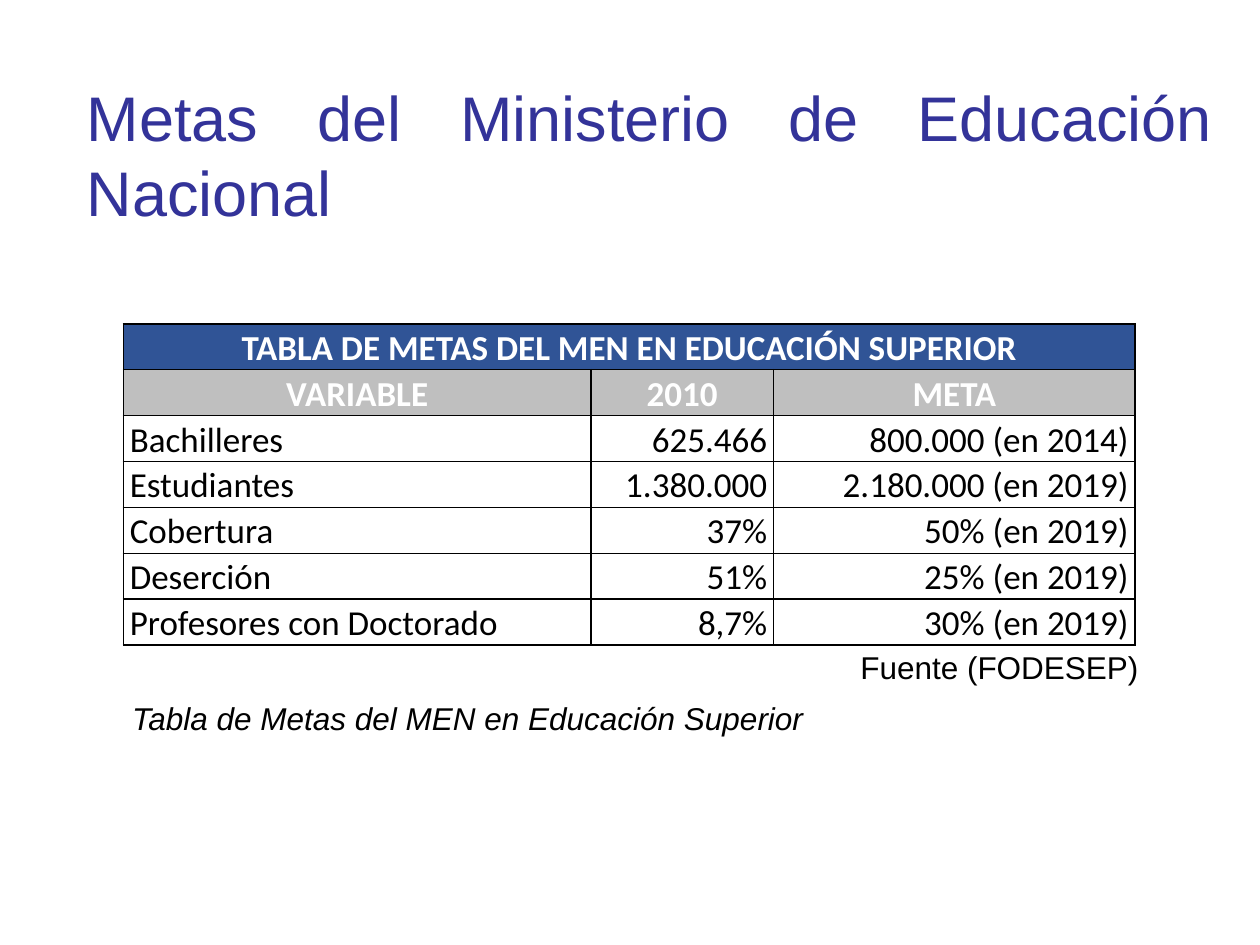
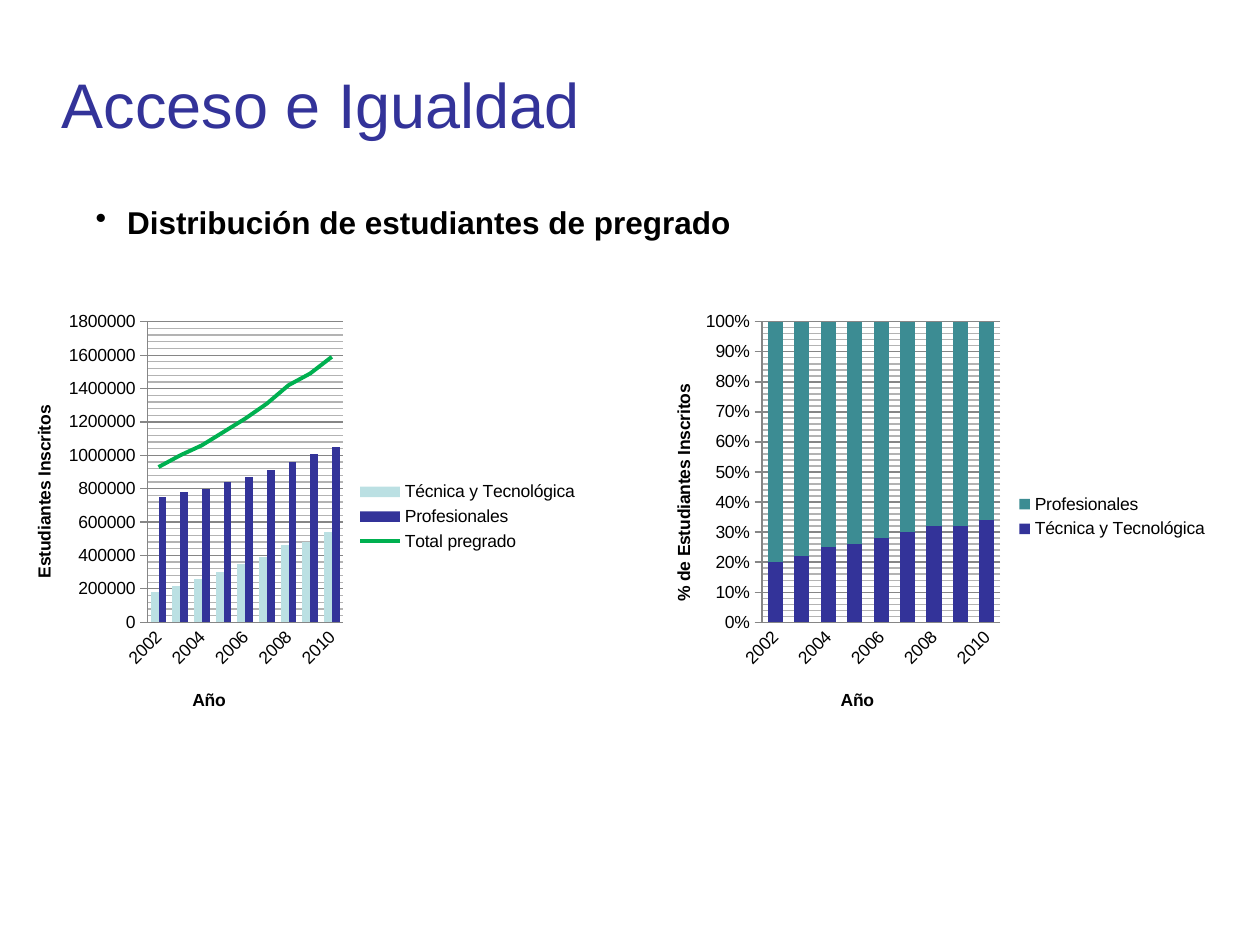
"""Build two slides on higher education goals and enrolment."""
from dataclasses import dataclass

from lxml.etree import SubElement as Sub
from pptx import Presentation
from pptx.chart.data import CategoryChartData as Data
from pptx.dml.color import RGBColor as Rgb
from pptx.enum.chart import XL_CHART_TYPE as Kind, XL_LEGEND_POSITION as Spot, XL_TICK_MARK as Tick
from pptx.enum.text import MSO_ANCHOR as Anchor, MSO_AUTO_SIZE as Auto, PP_ALIGN as Align
from pptx.oxml import parse_xml
from pptx.oxml.ns import nsdecls, qn
from pptx.util import Inches, Pt


@dataclass(frozen=True)
class Theme:
    font: str = "Arial"
    grid_font: str = "Calibri"
    ink: str = "000000"
    white: str = "FFFFFF"
    blue: str = "333399"
    band: str = "305496"
    gray: str = "BFBFBF"
    pale: str = "BBE0E3"
    green: str = "00B050"
    teal: str = "3C8C93"
    axis: str = "868686"
    minor: str = "B3B3B3"
    title: int = 36
    cell: int = 20
    body: int = 18
    small: int = 10


T = Theme()

GOALS = "TABLA DE METAS DEL MEN EN EDUCACIÓN SUPERIOR"
HEADS = ("VARIABLE", "2010", "META")
ROWS = [
    ("Bachilleres", "625.466", "800.000 (en 2014)"),
    ("Estudiantes", "1.380.000", "2.180.000 (en 2019)"),
    ("Cobertura", "37%", "50% (en 2019)"),
    ("Deserción", "51%", "25% (en 2019)"),
    ("Profesores con Doctorado", "8,7%", "30% (en 2019)"),
]
COLS = (3.71, 1.45, 2.87)
TABLE = (0.98, 2.57, sum(COLS), 2.5)

YEARS = [str(year) for year in range(2002, 2011)]
TECH, PROF = "Técnica y Tecnológica", "Profesionales"
SHARE = [20, 22, 25, 26, 28, 30, 32, 32, 34]
CHARTS = [
    dict(
        kind=Kind.COLUMN_CLUSTERED, at=(0, 2.42, 4.69, 3.36),
        label="Estudiantes Inscritos", top=1800000, step=200000, form="General",
        plot=(0.25, 0.04, 0.33, 0.71), foot=(0.32, 0.9), side=(0.05, 0.23),
        line="Total pregrado",
        data=[
            (TECH, T.pale, [180000, 220000, 260000, 300000, 350000,
                            390000, 460000, 480000, 540000]),
            (PROF, T.blue, [750000, 780000, 800000, 840000, 870000,
                            910000, 960000, 1010000, 1050000]),
            ("Total pregrado", T.green, [930000, 1000000, 1060000, 1140000, 1220000,
                                         1310000, 1420000, 1490000, 1590000]),
        ]),
    dict(
        kind=Kind.COLUMN_STACKED_100, at=(5.08, 2.42, 4.61, 3.36),
        label="% de Estudiantes Inscritos", top=1, step=0.1, form="0%",
        plot=(0.21, 0.04, 0.41, 0.71), foot=(0.34, 0.9), side=(0.05, 0.18),
        line=None,
        data=[
            (TECH, T.blue, SHARE),
            (PROF, T.teal, [100 - part for part in SHARE]),
        ]),
]


def style(font, size, color, face=T.font, bold=False, slant=False):
    font.name, font.size = face, Pt(size)
    font.bold, font.italic = bold, slant
    font.color.rgb = Rgb.from_string(color)


def write(slide, at, words, size=T.body, color=T.ink, align=None, bullet=False, **look):
    frame = slide.shapes.add_textbox(*map(Inches, at)).text_frame
    frame.word_wrap = True
    frame.auto_size = Auto.NONE
    para = frame.paragraphs[0]
    para.alignment = align
    if bullet:
        props = para._p.get_or_add_pPr()
        props.set("marL", str(Inches(0.25)))
        props.set("indent", str(-Inches(0.25)))
        Sub(props, qn("a:buChar")).set("char", "•")
    run = para.add_run()
    run.text = words
    style(run.font, size, color, **look)


def head(slide, at, words):
    write(slide, at, words, T.title, T.blue, Align.JUSTIFY)


def stroke(tag, color, width):
    return (f'<{tag} {nsdecls("a")} w="{Pt(width)}"><a:solidFill>'
            f'<a:srgbClr val="{color}"/></a:solidFill></{tag}>')


def edge(cell):
    props = cell._tc.get_or_add_tcPr()
    for spot, side in enumerate("LRTB"):
        props.insert(spot, parse_xml(stroke(f"a:ln{side}", T.ink, 1)))


def fill_cell(cell, words, align, color, fill):
    cell.margin_left = cell.margin_right = Inches(0.05)
    cell.margin_top = cell.margin_bottom = 0
    cell.vertical_anchor = Anchor.BOTTOM
    if fill:
        cell.fill.solid()
        cell.fill.fore_color.rgb = Rgb.from_string(fill)
    else:
        cell.fill.background()
    edge(cell)
    para = cell.text_frame.paragraphs[0]
    para.alignment, para.line_spacing = align, 1.07
    if words:
        run = para.add_run()
        run.text = words
        style(run.font, T.cell, color, T.grid_font, bold=bool(fill))


def add_goals(slide):
    lines = [(GOALS, "", ""), HEADS, *ROWS]
    table = slide.shapes.add_table(len(lines), len(COLS), *map(Inches, TABLE)).table
    table.first_row = table.horz_banding = False
    for col, wide in zip(table.columns, COLS):
        col.width = Inches(wide)
    table.cell(0, 0).merge(table.cell(0, len(COLS) - 1))
    fills = [T.band, T.gray] + [None] * len(ROWS)
    for r, (line, fill) in enumerate(zip(lines, fills)):
        for c, words in enumerate(line):
            align = Align.CENTER if fill else Align.RIGHT if c else Align.LEFT
            fill_cell(table.cell(r, c), words, align, T.white if fill else T.ink, fill)


def place(node, spot, box, inner=False):
    for old in node.findall(qn("c:layout")):
        node.remove(old)
    target = '<c:layoutTarget val="inner"/>' if inner else ""
    modes = "".join(f'<c:{key}Mode val="edge"/>' for key in "xy")
    sizes = "".join(f'<c:{key} val="{num}"/>' for key, num in zip("xywh", box))
    node.insert(spot, parse_xml(
        f'<c:layout {nsdecls("c")}><c:manualLayout>{target}{modes}{sizes}'
        "</c:manualLayout></c:layout>"))


def name_axis(axis, words, at, turn=0):
    frame = axis.axis_title.text_frame
    run = frame.paragraphs[0].add_run()
    run.text = words
    style(run.font, T.small, T.ink, bold=True)
    frame._txBody.find(qn("a:bodyPr")).set("rot", str(turn * 60000))
    place(axis.axis_title._element, 1, at)


def paint(line, color, width=0.75):
    line.color.rgb = Rgb.from_string(color)
    line.width = Pt(width)


def to_line(area, ser):
    bars = area.find(qn("c:barChart"))
    bars.remove(ser)
    for old in ser.findall(qn("c:invertIfNegative")):
        ser.remove(old)
    ser.find(qn("c:spPr")).addnext(
        parse_xml(f'<c:marker {nsdecls("c")}><c:symbol val="none"/></c:marker>'))
    for old in ser.findall(qn("c:smooth")):
        ser.remove(old)
    Sub(ser, qn("c:smooth")).set("val", "0")
    plot = parse_xml(
        f'<c:lineChart {nsdecls("c")}><c:grouping val="standard"/>'
        '<c:varyColors val="0"/></c:lineChart>')
    plot.append(ser)
    Sub(plot, qn("c:marker")).set("val", "1")
    for link in bars.findall(qn("c:axId")):
        Sub(plot, qn("c:axId")).set("val", link.get("val"))
    bars.addnext(plot)


def add_chart(slide, kind, at, label, top, step, form, plot, foot, side, line, data):
    table = Data()
    table.categories = YEARS
    for name, _, vals in data:
        table.add_series(name, vals)
    chart = slide.shapes.add_chart(kind, *map(Inches, at), table).chart
    style(chart.font, T.small, T.ink)
    chart.has_title = False
    chart.has_legend = True
    chart.legend.position = Spot.RIGHT
    chart.legend.include_in_layout = False

    bars = chart.plots[0]
    bars.gap_width, bars.vary_by_categories = 75, False
    if kind == Kind.COLUMN_STACKED_100:
        bars.overlap = 100

    years, scale = chart.category_axis, chart.value_axis
    years.major_tick_mark = years.minor_tick_mark = Tick.NONE
    style(years.tick_labels.font, T.small, T.ink)
    years._element.find(qn("c:txPr")).find(qn("a:bodyPr")).set("rot", str(-45 * 60000))
    scale.minimum_scale, scale.maximum_scale = 0, top
    scale.major_unit, scale.minor_unit = step, step / 5
    scale.major_tick_mark, scale.minor_tick_mark = Tick.CROSS, Tick.NONE
    scale.tick_labels.number_format = form
    scale.tick_labels.number_format_is_linked = False
    scale.has_major_gridlines = scale.has_minor_gridlines = True
    paint(scale.major_gridlines.format.line, T.axis)
    minor = scale._element.find(qn("c:minorGridlines"))
    Sub(minor, qn("c:spPr")).append(parse_xml(stroke("a:ln", T.minor, 0.75)))
    for axis in (years, scale):
        paint(axis.format.line, T.axis)
    name_axis(years, "Año", foot)
    name_axis(scale, label, side, -90)

    area = chart._chartSpace.chart.plotArea
    place(area, 0, plot, inner=True)
    for ser, (name, color, _) in zip(list(bars.series), data):
        if name == line:
            paint(ser.format.line, color, 2.25)
            to_line(area, ser._element)
        else:
            ser.format.fill.solid()
            ser.format.fill.fore_color.rgb = Rgb.from_string(color)


def main():
    deck = Presentation()
    deck.slide_width, deck.slide_height = Inches(10), Inches(7.5)
    blank = deck.slide_layouts[6]

    goals = deck.slides.add_slide(blank)
    head(goals, (0.59, 0.57, 9.13, 1.31), "Metas del Ministerio de Educación Nacional")
    add_goals(goals)
    write(goals, (6.73, 5.09, 2.5, 0.4), "Fuente (FODESEP)")
    write(goals, (0.95, 5.5, 8.41, 0.4),
          "Tabla de Metas del MEN en Educación Superior", slant=True)

    access = deck.slides.add_slide(blank)
    head(access, (0.39, 0.47, 8.98, 0.75), "Acceso e Igualdad")
    write(access, (0.66, 1.56, 5.35, 0.4), "Distribución de estudiantes de pregrado",
          align=Align.JUSTIFY, bullet=True, bold=True)
    for chart in CHARTS:
        add_chart(access, **chart)

    deck.save("out.pptx")


if __name__ == "__main__":
    main()
